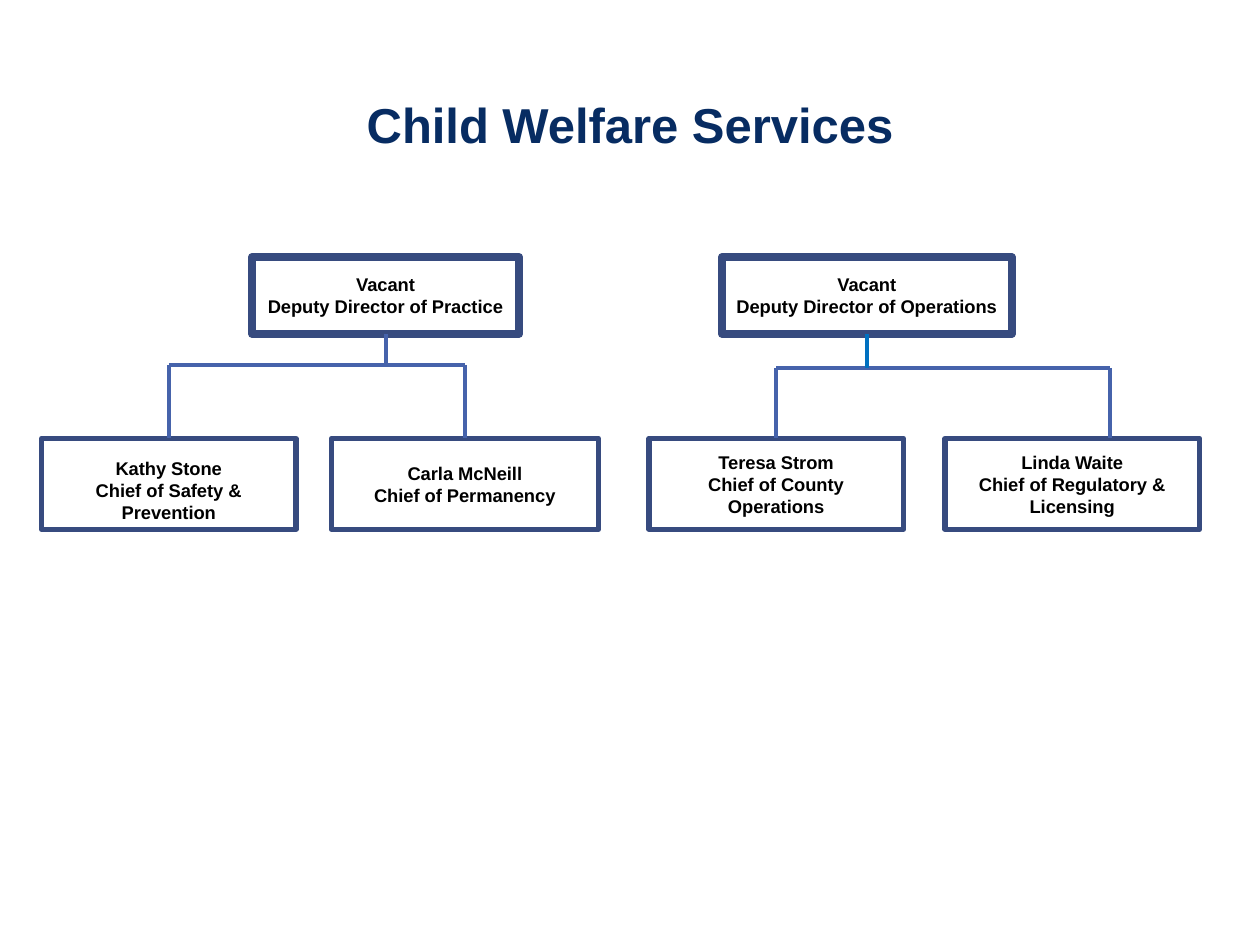
from dataclasses import dataclass

from lxml import etree
from pptx import Presentation
from pptx import util as u
from pptx.dml.color import RGBColor
from pptx.enum import shapes, text
from pptx.oxml import ns

FONT = "Arial"
COLORS = {
    "title": "072C62",
    "text": "000000",
    "fill": "FFFFFF",
    "border": "374B7F",
    "line": "4663AB",
    "accent": "0070C0",
}
# The slide is a grid of square cells; all lengths below are counted in cells.
COLUMNS, ROWS = 100, 75
CELL = u.Inches(0.1)
DEPUTY_HEIGHT, CHIEF_HEIGHT = 6.1, 7.2
TOP, BOTTOM = 0, 2  # connection sites of a rectangle


@dataclass
class Post:
    lines: list
    left: float  # from the left edge of its branch
    width: float
    drop: float = 0.5  # where the line arrives, as a share of the width
    top_inset: float = 0.5


def cells(*counts):
    return [u.Emu(round(count * CELL)) for count in counts]


def color(name):
    return RGBColor.from_string(COLORS[name])


def write_lines(frame, lines, size, color_name):
    for index, line in enumerate(lines):
        paragraph = frame.paragraphs[0] if index == 0 else frame.add_paragraph()
        paragraph.alignment = text.PP_ALIGN.CENTER
        run = paragraph.add_run()
        run.text = line
        run.font.name = FONT
        run.font.size = u.Pt(size)
        run.font.bold = True
        run.font.color.rgb = color(color_name)


def add_title(slide, box, title):
    frame = slide.shapes.add_textbox(*cells(*box)).text_frame
    frame.word_wrap = True
    frame.margin_left = frame.margin_right = 0
    frame.margin_top = frame.margin_bottom = 0
    frame.vertical_anchor = text.MSO_ANCHOR.MIDDLE
    write_lines(frame, [title], 28, "title")


def add_post(slide, post, left, top, height, border):
    shape = slide.shapes.add_shape(
        shapes.MSO_SHAPE.RECTANGLE, *cells(left + post.left, top, post.width, height))
    shape.shadow.inherit = False
    shape.fill.solid()
    shape.fill.fore_color.rgb = color("fill")
    shape.line.color.rgb = color("border")
    shape.line.width = u.Pt(border)
    frame = shape.text_frame
    frame.word_wrap = True
    frame.margin_top, = cells(post.top_inset)
    frame.vertical_anchor = text.MSO_ANCHOR.MIDDLE
    write_lines(frame, post.lines, 10.5, "text")
    return shape


def add_line(slide, start, end, color_name="line"):
    connector = slide.shapes.add_connector(
        shapes.MSO_CONNECTOR.STRAIGHT, *cells(*start, *end))
    connector.line.color.rgb = color(color_name)
    connector.line.width = u.Pt(2.25)
    etree.SubElement(connector._element.spPr, ns.qn("a:effectLst"))
    return connector


def add_branch(slide, box, deputy, chiefs, bus_row, stem_color="line"):
    """Place a deputy at the top of the box and the chiefs along its bottom."""
    left, top, _, height = box
    chief_top = top + height - CHIEF_HEIGHT
    bus = top + bus_row
    deputy_shape = add_post(slide, deputy, left, top, DEPUTY_HEIGHT, 4.5)
    arrivals = []
    for chief in chiefs:
        chief_shape = add_post(slide, chief, left, chief_top, CHIEF_HEIGHT, 3)
        x = left + chief.left + chief.width * chief.drop
        drop = add_line(slide, (x, bus), (x, chief_top))
        if chief.drop == 0.5:
            drop.end_connect(chief_shape, TOP)
        arrivals.append(x)
    add_line(slide, (arrivals[0], bus), (arrivals[-1], bus))
    x = left + deputy.left + deputy.width / 2
    stem = add_line(slide, (x, top + DEPUTY_HEIGHT), (x, bus), stem_color)
    stem.begin_connect(deputy_shape, BOTTOM)


def main():
    presentation = Presentation()
    presentation.slide_width, presentation.slide_height = cells(COLUMNS, ROWS)
    slide = presentation.slides.add_slide(presentation.slide_layouts[6])
    add_title(slide, (9.9, 7.7, 80.2, 4.3), "Child Welfare Services")
    add_branch(
        slide, (3.3, 20.4, 44.2, 21.6),
        Post(["Vacant", "Deputy Director of Practice"], 16.7, 21.2),
        [Post(["Kathy Stone", "Chief of Safety &", "Prevention"], 0, 20.2, top_inset=1.5),
         Post(["Carla McNeill", "Chief of Permanency"], 23, 21.2)],
        bus_row=8.6)
    add_branch(
        slide, (51.5, 20.4, 43.7, 21.6),
        Post(["Vacant", "Deputy Director of Operations"], 5.8, 23),
        [Post(["Teresa Strom", "Chief of County Operations"], 0, 20.2),
         Post(["Linda Waite", "Chief of Regulatory & Licensing"], 23.5, 20.2, drop=0.65)],
        bus_row=8.8, stem_color="accent")
    presentation.save("out.pptx")


if __name__ == "__main__":
    main()
